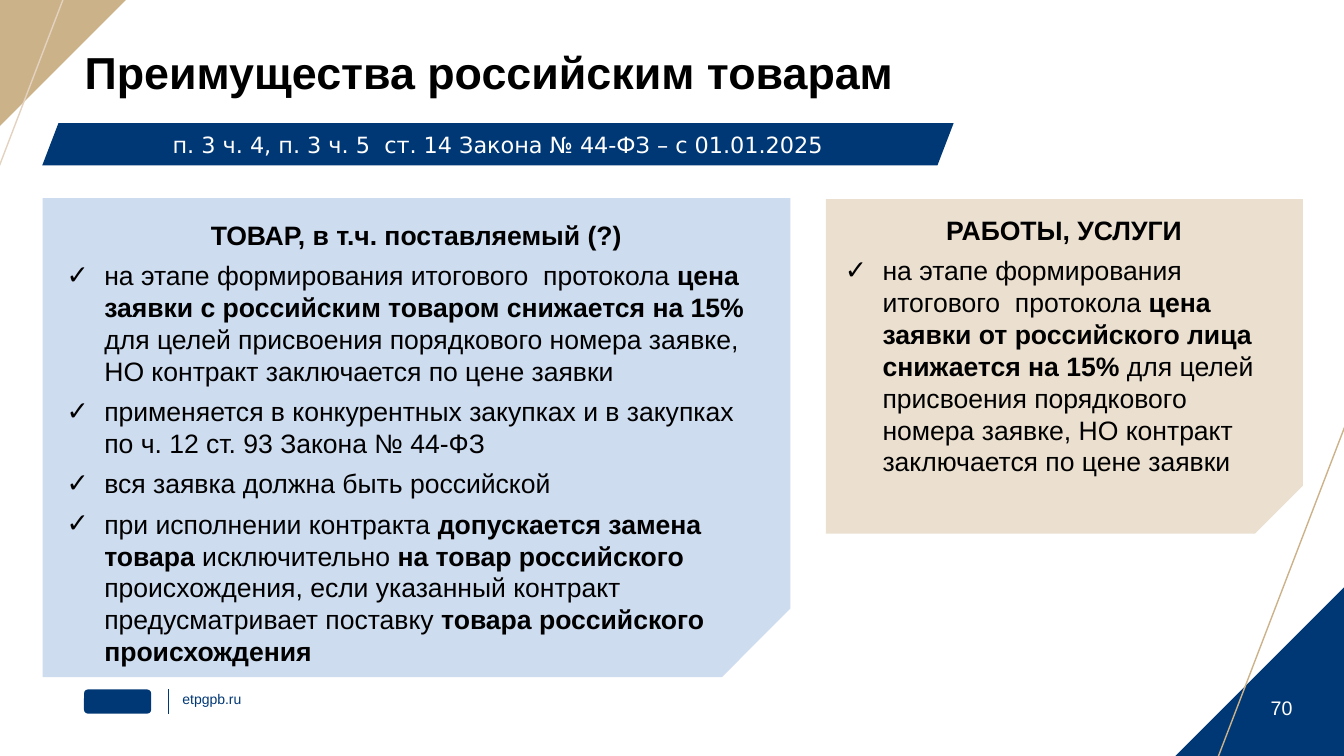
from lxml import etree
from pptx import Presentation
from pptx.dml.color import RGBColor
from pptx.enum.shapes import MSO_CONNECTOR, MSO_SHAPE as Preset
from pptx.enum.text import MSO_ANCHOR as Anchor, MSO_AUTO_SIZE as AutoSize, PP_ALIGN as Align
from pptx.oxml.ns import qn
from pptx.util import Pt

COLORS = {"navy": "003876", "gold": "CCB289", "sand": "E3D2C0", "blue": "CEDCEF",
          "beige": "EBE0D0", "white": "FFFFFF", "black": "000000"}

TITLE = "Преимущества российским товарам"
LAW = "п. 3 ч. 4, п. 3 ч. 5  ст. 14 Закона № 44-ФЗ – с 01.01.2025"
SITE = "etpgpb.ru"
PAGE_NUMBER = "70"

# Each bullet is a list of spans that alternate: regular, bold, regular, ...
STAGE = "на этапе формирования итогового  протокола "
RANKING = "для целей присвоения порядкового номера заявке, НО контракт заключается по цене заявки"
PANELS = [
    {
        "color": "blue", "frame": (30.4, 141.6, 534.2, 342), "text_frame": (40.3, 152.6, 514, 330.5),
        "heading": "ТОВАР, в т.ч. поставляемый (?)",
        "bullets": [
            [STAGE, "цена заявки с российским товаром снижается на 15% ", RANKING],
            ["применяется в конкурентных закупках и в закупках по ч. 12 ст. 93 Закона № 44-ФЗ"],
            ["вся заявка должна быть российской"],
            ["при исполнении контракта ", "допускается замена товара", " исключительно ",
             "на товар российского ",
             "происхождения, если указанный контракт предусматривает поставку ",
             "товара российского происхождения"],
        ],
    },
    {
        "color": "beige", "frame": (590, 142.2, 340.6, 239), "text_frame": (596.2, 149, 327.6, 197.3),
        "heading": "РАБОТЫ, УСЛУГИ",
        "bullets": [[STAGE, "цена заявки от российского лица снижается на 15% ", RANKING]],
    },
]

CORNER_LINES = [((962.6, 299.5), (867.6, 547.2), "gold"), ((46.8, -5), (-3.6, 126.7), "sand")]
BULLET_INDENT = 27


def rgb(name):
    return RGBColor.from_string(COLORS[name])


def place(shape, left, top, width, height):
    shape.left, shape.top, shape.width, shape.height = map(Pt, (left, top, width, height))


def add_filled(page, preset, frame, color, adjustment=None, rotation=0):
    shape = page.shapes.add_shape(preset, *map(Pt, frame))
    shape.shadow.inherit = False
    shape.fill.solid()
    shape.fill.fore_color.rgb = rgb(color)
    shape.line.fill.background()
    shape.rotation = rotation
    if adjustment is not None:
        shape.adjustments[0] = adjustment
    return shape


def add_line(page, start, end, color, weight):
    line = page.shapes.add_connector(MSO_CONNECTOR.STRAIGHT, *map(Pt, start + end))
    line.line.color.rgb = rgb(color)
    line.line.width = Pt(weight)
    etree.SubElement(line.element.spPr, qn("a:effectLst"))


def set_frame(box, inset=(0, 0), anchor=Anchor.TOP):
    frame = box.text_frame
    frame.word_wrap = True
    frame.auto_size = AutoSize.NONE
    frame.vertical_anchor = anchor
    frame.margin_left = frame.margin_right = Pt(inset[0])
    frame.margin_top = frame.margin_bottom = Pt(inset[1])
    return frame


def style(para, size, color, bold=None, align=Align.LEFT, font="Arial"):
    para.alignment = align
    para.font.name = font
    para.font.size = Pt(size)
    para.font.bold = bold
    para.font.color.rgb = rgb(color)


def set_bullet(para, mark=None):
    """Give the paragraph a hanging bullet, or none without a mark."""
    props = para._p.get_or_add_pPr()
    indent = Pt(BULLET_INDENT) if mark else 0
    props.set("marL", str(indent))
    props.set("indent", str(-indent))
    if mark:
        etree.SubElement(props, qn("a:buFont"), typeface="Arial")
        etree.SubElement(props, qn("a:buChar"), char=mark)
    else:
        etree.SubElement(props, qn("a:buNone"))


def add_label(page, text, frame, size, color, align=Align.LEFT, anchor=Anchor.TOP):
    box = page.shapes.add_textbox(*map(Pt, frame))
    para = set_frame(box, anchor=anchor).paragraphs[0]
    para.text = text
    style(para, size, color, align=align)


def bring_to_front(shape):
    shape.element.getparent().append(shape.element)


def add_panel(page, body, panel):
    left, top, width, height = panel["frame"]
    # The card is turned by 90°, so its own width and height are swapped around the same centre.
    turned = (left + (width - height) / 2, top + (height - width) / 2, height, width)
    add_filled(page, Preset.SNIP_1_RECTANGLE, turned, panel["color"], 0.143, 90)

    bring_to_front(body)
    place(body, *panel["text_frame"])
    frame = set_frame(body, inset=(7.2, 3.6))
    for index, spans in enumerate([[panel["heading"]]] + panel["bullets"]):
        is_heading = index == 0
        para = frame.paragraphs[0] if is_heading else frame.add_paragraph()
        set_bullet(para, None if is_heading else "✓")
        para.line_spacing = 1.0
        para.space_before = Pt(0)
        para.space_after = Pt(6)
        style(para, 19, "black", is_heading, Align.CENTER if is_heading else Align.LEFT)
        for order, text in enumerate(spans):
            span = para.add_run()
            span.text = text
            if order % 2:
                span.font.bold = True


def main():
    deck = Presentation()
    deck.slide_width, deck.slide_height = Pt(960), Pt(540)
    page = deck.slides.add_slide(deck.slide_layouts.get_by_name("Two Content"))
    title, *bodies = page.placeholders

    add_filled(page, Preset.ISOSCELES_TRIANGLE, (839.5, 419.5, 120.5, 120.5), "navy", 1)
    add_filled(page, Preset.ISOSCELES_TRIANGLE, (0, 0, 90, 90), "gold", 1, 180)
    for start, end, color in CORNER_LINES:
        add_line(page, start, end, color, 1)

    add_label(page, PAGE_NUMBER, (886.3, 488.2, 58.3, 26), 14, "white", Align.CENTER, Anchor.BOTTOM)
    add_filled(page, Preset.ROUNDED_RECTANGLE, (60, 492.5, 48, 17.3), "navy")
    add_line(page, (120.2, 492.5), (120.2, 509.8), "navy", 0.5)
    add_label(page, SITE, (130.3, 493.2, 79.2, 12.2), 10, "navy")

    bring_to_front(title)
    place(title, 60.5, 36, 839.5, 34.6)
    para = set_frame(title).paragraphs[0]
    para.text = TITLE
    para.line_spacing = 0.9
    style(para, 32, "black", True)

    banner = add_filled(page, Preset.PARALLELOGRAM, (30.2, 88, 651, 30.2), "navy", 0.384)
    para = set_frame(banner, (5.8, 2.9), Anchor.MIDDLE).paragraphs[0]
    para.text = LAW
    style(para, 16, "white", align=Align.CENTER, font="DejaVu Sans")

    for body, panel in zip(bodies, PANELS):
        add_panel(page, body, panel)
    deck.save("out.pptx")


if __name__ == "__main__":
    main()
